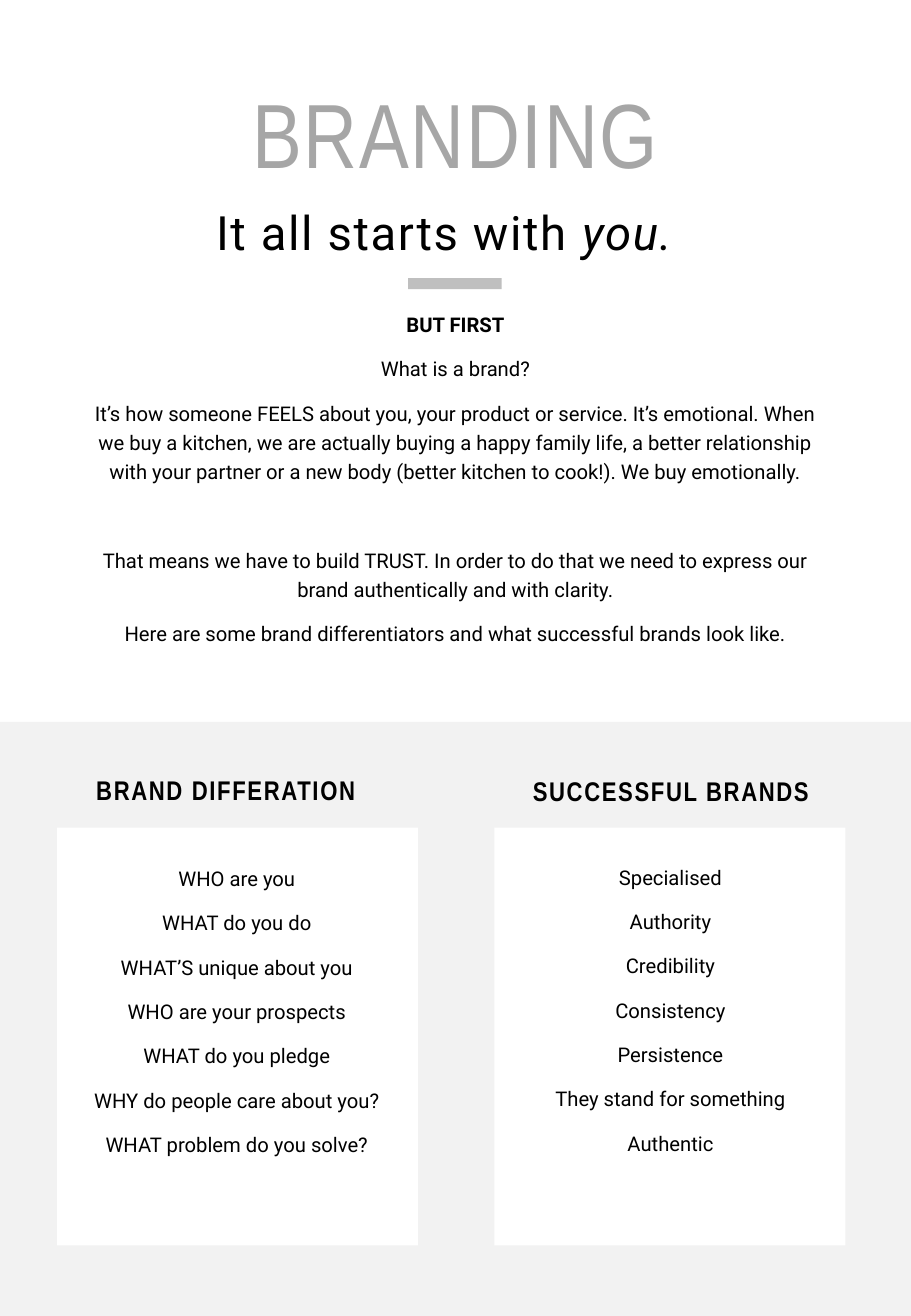
from pptx import Presentation
from pptx.dml.color import RGBColor
from pptx.enum.shapes import MSO_SHAPE
from pptx.enum.text import MSO_ANCHOR, MSO_AUTO_SIZE, PP_ALIGN
from pptx.util import Inches, Pt

deck = Presentation()
deck.slide_width, deck.slide_height = Inches(7.5), Inches(10.83)
slide = deck.slides.add_slide(deck.slide_layouts[5])
shapes = slide.shapes


def area(left, top, width, height):
    wide, high = deck.slide_width / 100, deck.slide_height / 100
    return [round(n) for n in (left * wide, top * high, width * wide, height * high)]


def write(box, text, font="Roboto", size=12, color="000000", bold=False,
          italic=False, track=0, line=1.2, gap=9, align=PP_ALIGN.CENTER, fresh=True):
    frame = box.text_frame
    if fresh:
        frame.word_wrap = True
        frame.auto_size = MSO_AUTO_SIZE.NONE
        frame.vertical_anchor = MSO_ANCHOR.TOP
    para = frame.paragraphs[-1]
    if para.runs and fresh:
        para = frame.add_paragraph()
    para.alignment = align
    para.line_spacing = line
    para.space_before = Pt(gap)
    run = para.add_run()
    run.text = text
    run.font.name = font
    run.font.size = Pt(size)
    run.font.bold = bold
    run.font.italic = italic
    run.font.color.rgb = RGBColor.from_string(color)
    run._r.get_or_add_rPr().set("spc", str(track * 100))


title = shapes.title
title.left, title.top, title.width, title.height = area(21.2, 5.45, 57.6, 9.33)
write(title, "BRANDING", font="Arial Narrow", size=54, color="A6A6A6",
      track=1, line=1.0, gap=0)

motto = shapes.add_textbox(*area(22.4, 14.96, 55.07, 5.26))
plain = dict(size=28, track=1, line=1.0, gap=0, align=PP_ALIGN.LEFT)
write(motto, "It all starts with ", **plain)
write(motto, "you.", italic=True, fresh=False, **plain)
motto.text_frame.word_wrap = False

blocks = [
    ("BFBFBF", (44.8, 21.14, 10.27, 0.83)),
    ("F2F2F2", (0, 54.85, 100, 45.15)),
    ("FFFFFF", (6.27, 62.88, 39.6, 31.76)),
    ("FFFFFF", (54.27, 62.88, 38.53, 31.76)),
]
for color, spot in blocks:
    block = shapes.add_shape(MSO_SHAPE.RECTANGLE, *area(*spot))
    block.shadow.inherit = False
    block.fill.solid()
    block.fill.fore_color.rgb = RGBColor.from_string(color)
    block.line.fill.background()

story = shapes.add_textbox(*area(8.4, 22.9, 83.2, 26.13))
write(story, "BUT FIRST", bold=True)
for text, gap in [
    ("What is a brand?", 9),
    ("It’s how someone FEELS about you, your product or service. It’s emotional. "
     "When we buy a kitchen, we are actually buying a happy family life, a better "
     "relationship with your partner or a new body (better kitchen to cook!). "
     "We buy emotionally.", 9),
    ("That means we have to build TRUST. In order to do that we need to express "
     "our brand authentically and with clarity.", 35.3),
    ("Here are some brand differentiators and what successful brands look like.", 9),
]:
    write(story, text, gap=gap)

lists = [
    ("BRAND DIFFERATION", (6.27, 57.8, 37.07, 3.79), (7.73, 65, 36.53, 26.13),
     ["WHO are you", "WHAT do you do", "WHAT’S unique about you",
      "WHO are your prospects", "WHAT do you pledge",
      "WHY do people care about you?", "WHAT problem do you solve?"]),
    ("SUCCESSFUL BRANDS", (54.53, 57.89, 38.27, 3.79), (56.4, 64.91, 34.4, 26.13),
     ["Specialised", "Authority", "Credibility", "Consistency",
      "Persistence", "They stand for something", "Authentic"]),
]
for head, top, spot, items in lists:
    write(shapes.add_textbox(*area(*top)), head, font="Arial Narrow",
          size=16, bold=True, track=1)
    box = shapes.add_textbox(*area(*spot))
    for item in items:
        write(box, item)

deck.save("out.pptx")
